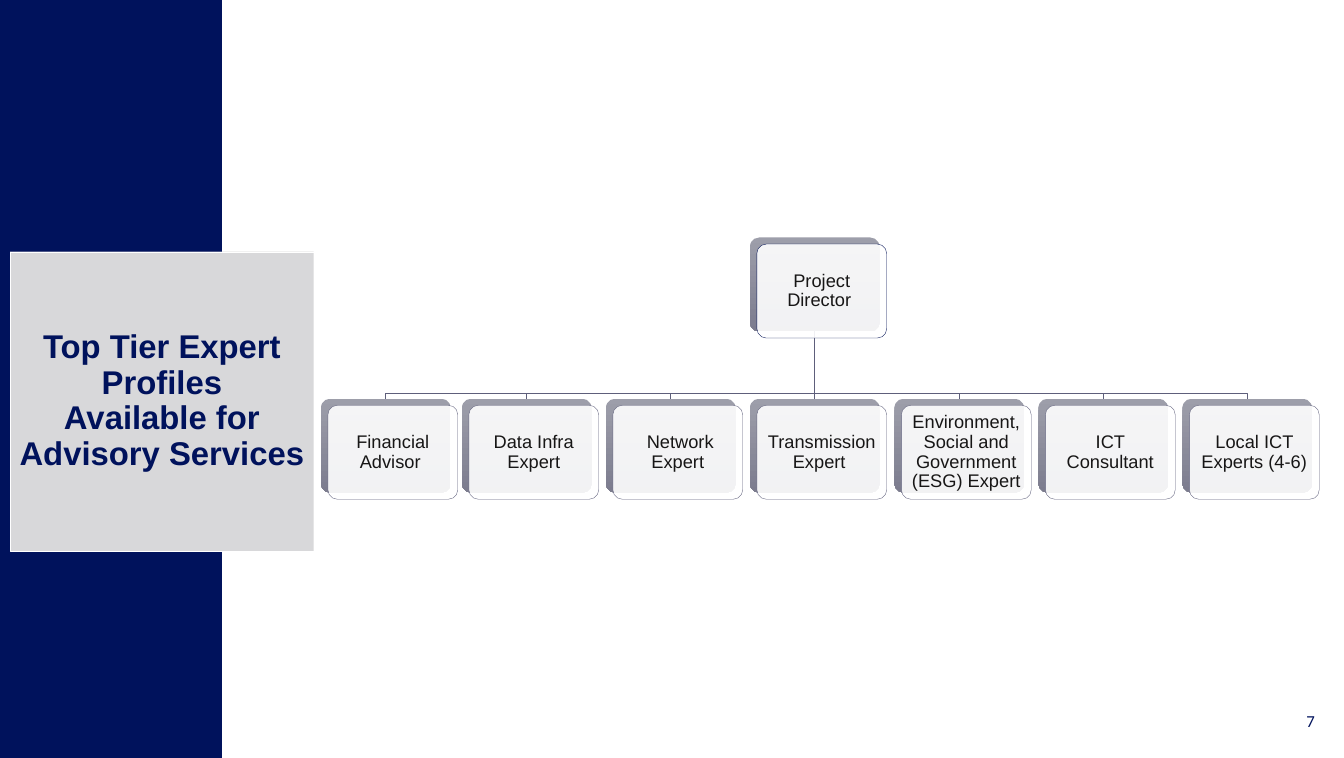
from lxml import etree
from pptx import Presentation
from pptx import util as u
from pptx.dml.color import RGBColor
from pptx.enum import shapes, text
from pptx.oxml import ns

PX = u.Inches(1) // 100
NAVY = RGBColor(0x00, 0x12, 0x5C)
OUTLINE = RGBColor(0x00, 0x10, 0x53)
SLATE = RGBColor(0x5E, 0x5F, 0x7B)
SILVER = RGBColor(0xD8, 0xD8, 0xDA)
WHITE = RGBColor(0xFF, 0xFF, 0xFF)
INK = RGBColor(0x17, 0x16, 0x16)
SHADE_TOP = RGBColor(0x9D, 0x9E, 0xAA)
SHADE_BOTTOM = RGBColor(0x7C, 0x7C, 0x8E)

CARD_WIDTH, CARD_HEIGHT, OFFSET = 257, 186, 14
DIRECTOR_LEFT, DIRECTOR_TOP, EXPERT_TOP = 1484, 470, 789
BUS_Y = 778
FIRST_LEFT, SECOND_LEFT, STEP = 635, 914, 285.2
EXPERTS = [
    "Financial Advisor ",
    "Data Infra Expert",
    " Network Expert",
    "Transmission Expert ",
    "Environment, Social and Government (ESG) Expert ",
    "ICT Consultant",
    "Local ICT Experts (4-6)",
]

CARD_TEXT = {"size": u.Pt(26), "name": "Arial"}
TITLE_TEXT = {"size": u.Pt(46.8), "name": "Arial", "bold": True}
NUMBER_TEXT = {"size": u.Pt(23.9), "name": "Calibri"}
CENTERED = {"alignment": text.PP_ALIGN.CENTER, "line_spacing": 0.9}
RIGHT = {"alignment": text.PP_ALIGN.RIGHT}


def px(*lengths):
    return [length * PX for length in lengths]


def apply(target, values):
    for name, value in values.items():
        setattr(target, name, value)


def set_line(shape, color, width):
    shape.line.color.rgb = color
    shape.line.width = u.Pt(width)


def add_box(page, kind, area, fill=None, line=None):
    box = page.shapes.add_shape(kind, *px(*area))
    box.shadow.inherit = False
    if fill is not None:
        box.fill.solid()
        box.fill.fore_color.rgb = fill
    if line is None:
        box.line.fill.background()
    else:
        set_line(box, *line)
    return box


def write(box, words, font, color, layout, inset=10):
    frame = box.text_frame
    margins = ("margin_left", "margin_top", "margin_right", "margin_bottom")
    apply(frame, dict.fromkeys(margins, inset * PX))
    apply(frame, {"word_wrap": True, "vertical_anchor": text.MSO_ANCHOR.MIDDLE})
    para = frame.paragraphs[0]
    para.text = words
    apply(para, layout)
    for span in para.runs:
        apply(span.font, font)
        span.font.color.rgb = color


def add_card_back(page, left, top):
    back = add_box(page, shapes.MSO_SHAPE.ROUNDED_RECTANGLE,
                   (left, top, CARD_WIDTH, CARD_HEIGHT))
    back.adjustments[0] = 0.1
    back.fill.gradient()
    back.fill.gradient_angle = 270
    for stop, color in zip(back.fill.gradient_stops, (SHADE_TOP, SHADE_BOTTOM)):
        stop.color.rgb = color
    return back


def add_card_front(page, left, top, words, line_color):
    front = add_box(page, shapes.MSO_SHAPE.ROUNDED_RECTANGLE,
                    (left + OFFSET, top + OFFSET - 1, CARD_WIDTH, CARD_HEIGHT),
                    WHITE, (line_color, 0.5))
    front.adjustments[0] = 0.1
    color = front.fill._xPr.find(".//" + ns.qn("a:srgbClr"))
    etree.SubElement(color, ns.qn("a:alpha"), val="90000")
    write(front, words, CARD_TEXT, INK, CENTERED, 11)


def add_stem(page, upper, lower):
    stem = page.shapes.add_connector(shapes.MSO_CONNECTOR.STRAIGHT, 0, 0, 0, 0)
    stem.begin_connect(upper, 2)
    stem.end_connect(lower, 0)
    set_line(stem, SLATE, 1)
    etree.SubElement(stem._element.spPr, ns.qn("a:effectLst"))


def add_branch(page, upper, lower):
    start_x = upper.left + upper.width // 2
    end_x = lower.left + lower.width // 2
    builder = page.shapes.build_freeform(start_x, upper.top + upper.height)
    corners = [(start_x, BUS_Y * PX), (end_x, BUS_Y * PX), (end_x, lower.top)]
    builder.add_line_segments(corners, close=False)
    branch = builder.convert_to_shape()
    branch.shadow.inherit = False
    branch.fill.background()
    set_line(branch, SLATE, 1)


def add_chart_of_experts(page):
    lefts = [FIRST_LEFT] + [round(SECOND_LEFT + STEP * i)
                            for i in range(len(EXPERTS) - 1)]
    director = add_card_back(page, DIRECTOR_LEFT, DIRECTOR_TOP)
    for left in lefts:
        expert = add_card_back(page, left, EXPERT_TOP)
        link = add_stem if left == DIRECTOR_LEFT else add_branch
        link(page, director, expert)
    add_card_front(page, DIRECTOR_LEFT, DIRECTOR_TOP, "Project Director ", OUTLINE)
    for left, words in zip(lefts, EXPERTS):
        add_card_front(page, left, EXPERT_TOP, words, SLATE)


def main():
    deck = Presentation()
    apply(deck, {"slide_width": 2660 * PX, "slide_height": 1500 * PX})
    page = deck.slides.add_slide(deck.slide_layouts[6])
    rectangle = shapes.MSO_SHAPE.RECTANGLE
    add_box(page, rectangle, (0, 0, 439, 1500), NAVY, (NAVY, 1))
    title = add_box(page, rectangle, (20, 498, 601, 593), SILVER, (WHITE, 0.25))
    write(title, "Top Tier Expert Profiles\vAvailable for Advisory Services ",
          TITLE_TEXT, NAVY, CENTERED)
    add_chart_of_experts(page)
    number = page.shapes.add_textbox(*px(2013, 1386, 599, 80))
    write(number, "7", NUMBER_TEXT, NAVY, RIGHT)
    deck.save("out.pptx")


if __name__ == "__main__":
    main()
